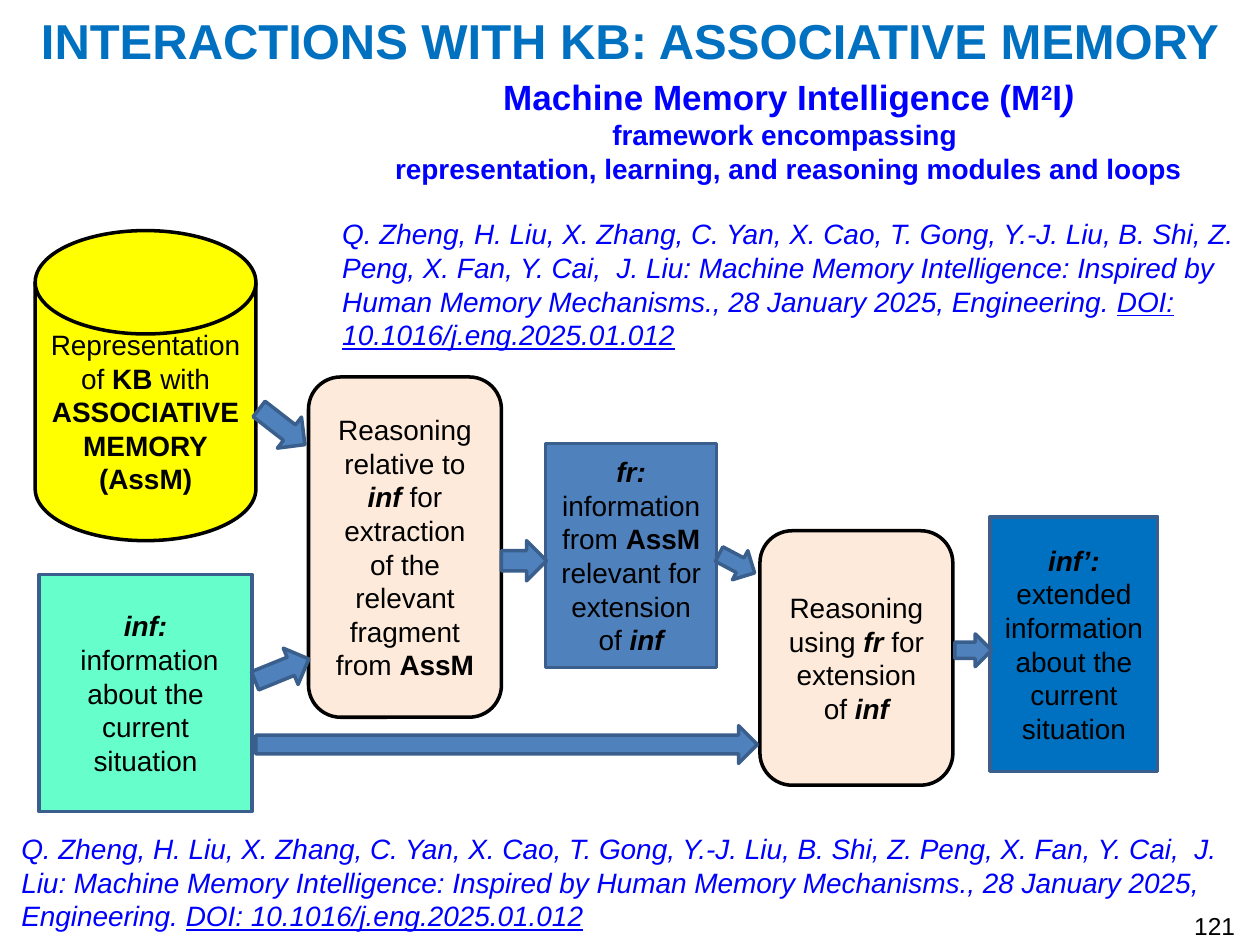
from pptx import Presentation
from pptx import util as u
from pptx.dml.color import RGBColor
from pptx.enum import shapes, text

KIND = shapes.MSO_SHAPE
ALIGN = text.PP_ALIGN
BLACK, BLUE, SKY, STEEL, STEEL_EDGE = "000000", "0000FF", "0070C0", "4F81BD", "3A5F8C"
STYLES = {"b": "bold", "i": "italic", "u": "underline"}

CITATION = [
    ("Q. Zheng, H. Liu, X. Zhang, C. Yan, X. Cao, T. Gong, Y.-J. Liu, B. Shi, "
     "Z. Peng, X. Fan, Y. Cai,  J. Liu: Machine Memory Intelligence: Inspired by "
     "Human Memory Mechanisms., 28 January 2025, Engineering. ", "i"),
    ("DOI: 10.1016/j.eng.2025.01.012", "iu"),
]

# Diagram parts: kind, box in cm within the diagram, fill, edge, paragraphs
BLOCKS = [
    (KIND.FLOWCHART_MAGNETIC_DISK, (0, 0, 4.45, 6.25), "FFFF00", BLACK,
     [[("Representation", "")], [("of ", ""), ("KB ", "b"), ("with", "")],
      [("ASSOCIATIVE MEMORY", "b")], [("(AssM)", "b")]]),
    (KIND.ROUNDED_RECTANGLE, (5.51, 2.95, 3.89, 6.86), "FDEADA", BLACK,
     [[("Reasoning", "")],
      [("relative to ", ""), ("inf ", "bi"),
       ("for extraction of the relevant fragment from ", ""), ("AssM", "b")]]),
    (KIND.RECTANGLE, (0.08, 6.93, 4.29, 4.78), "66FFCC", STEEL_EDGE,
     [[("inf:", "bi")], [(" information about the current situation", "")]]),
    (KIND.RECTANGLE, (10.29, 4.29, 3.45, 4.52), STEEL, STEEL_EDGE,
     [[("fr:", "bi")],
      [("information from ", ""), ("AssM ", "b"),
       ("relevant for extension of ", ""), ("inf", "bi")]]),
    (KIND.ROUNDED_RECTANGLE, (14.61, 6.05, 3.89, 5.13), "FDEADA", BLACK,
     [[("Reasoning using ", ""), ("fr", "bi"),
       (" for extension of ", ""), ("inf", "bi")]]),
    (KIND.RECTANGLE, (19.25, 5.77, 3.38, 5.13), SKY, STEEL_EDGE,
     [[("inf’:", "bi")], [("extended information about the current situation", "")]]),
]

# Arrows: box in cm within the diagram, rotation in degrees
ARROWS = [
    ((4.39, 3.56, 1.17, 0.79), 37.8),
    ((4.39, 8.46, 1.17, 0.79), 337.9),
    ((9.4, 6.25, 0.91, 0.81), 0),
    ((13.74, 6.38, 0.81, 0.66), 27.9),
    ((4.45, 9.98, 10.11, 0.76), 0),
    ((18.54, 8.13, 0.74, 0.66), 0),
]


def color(value):
    return RGBColor.from_string(value)


def lengths(box):
    return [u.Cm(value) for value in box]


def write(paragraph, runs, size=16, ink=BLACK, align=ALIGN.CENTER):
    paragraph.alignment = align
    for words, style in runs:
        run = paragraph.add_run()
        run.text = words
        run.font.color.rgb = color(ink)
        formats = {"name": "Arial", "size": u.Pt(size)}
        formats.update({name: key in style for key, name in STYLES.items()})
        for name, value in formats.items():
            setattr(run.font, name, value)
        if "^" in style:
            run._r.get_or_add_rPr().set("baseline", "30000")


def next_paragraph(frame, index):
    return frame.add_paragraph() if index else frame.paragraphs[0]


def add_text(slide, box, rows, anchor=text.MSO_ANCHOR.TOP):
    """Each row is (runs, size, ink, align)."""
    frame = slide.shapes.add_textbox(*lengths(box)).text_frame
    frame.word_wrap = True
    frame.vertical_anchor = anchor
    for index, row in enumerate(rows):
        write(next_paragraph(frame, index), *row)
    return frame


def add_block(slide, kind, box, fill, edge):
    shape = slide.shapes.add_shape(kind, *lengths(box))
    shape.shadow.inherit = False
    shape.fill.solid()
    shape.fill.fore_color.rgb = color(fill)
    shape.line.color.rgb = color(edge)
    shape.line.width = u.Pt(2)
    return shape


def add_title(slide, box):
    runs = [("INTERACTIONS WITH KB: ASSOCIATIVE MEMORY", "b")]
    add_text(slide, box, [(runs, 28, SKY, ALIGN.CENTER)], text.MSO_ANCHOR.MIDDLE)


def add_framework(slide, box):
    center = ALIGN.CENTER
    frame = add_text(slide, box, [
        ([("Machine Memory Intelligence (M", "b"), ("2", "b^"), ("I", "b"), (")", "bi")],
         20, BLUE, center),
        ([("framework encompassing ", "b")], 16, BLUE, center),
        ([("representation, learning, and reasoning modules and loops", "b")],
         16, BLUE, center),
        (CITATION, 16, BLUE, ALIGN.LEFT),
    ])
    frame.paragraphs[-1].space_before = u.Pt(18.4)


def add_diagram(slide, box):
    def within(part):
        return box[0] + part[0], box[1] + part[1], part[2], part[3]

    for kind, part, fill, edge, paragraphs in BLOCKS:
        frame = add_block(slide, kind, within(part), fill, edge).text_frame
        frame.word_wrap = True
        frame.vertical_anchor = text.MSO_ANCHOR.MIDDLE
        for index, runs in enumerate(paragraphs):
            write(next_paragraph(frame, index), runs)
    for part, rotation in ARROWS:
        arrow = add_block(slide, KIND.RIGHT_ARROW, within(part), STEEL, STEEL_EDGE)
        arrow.rotation = rotation


def add_footer(slide, citation_box, number_box):
    add_text(slide, citation_box, [(CITATION, 16, BLUE, ALIGN.LEFT)])
    add_text(slide, number_box, [([("121", "")], 14, BLACK, ALIGN.RIGHT)])


def main():
    presentation = Presentation()
    presentation.slide_width, presentation.slide_height = u.Cm(25.4), u.Cm(19.05)
    slide = presentation.slides.add_slide(presentation.slide_layouts[6])
    add_title(slide, (0, 0.2, 25.4, 1.2))
    add_diagram(slide, (0.71, 4.65))
    add_footer(slide, (0.18, 16.64, 24.97, 2.31), (23.7, 18.24, 1.45, 0.69))
    add_framework(slide, (6.65, 1.4, 18.49, 5.89))
    presentation.save("out.pptx")


if __name__ == "__main__":
    main()
